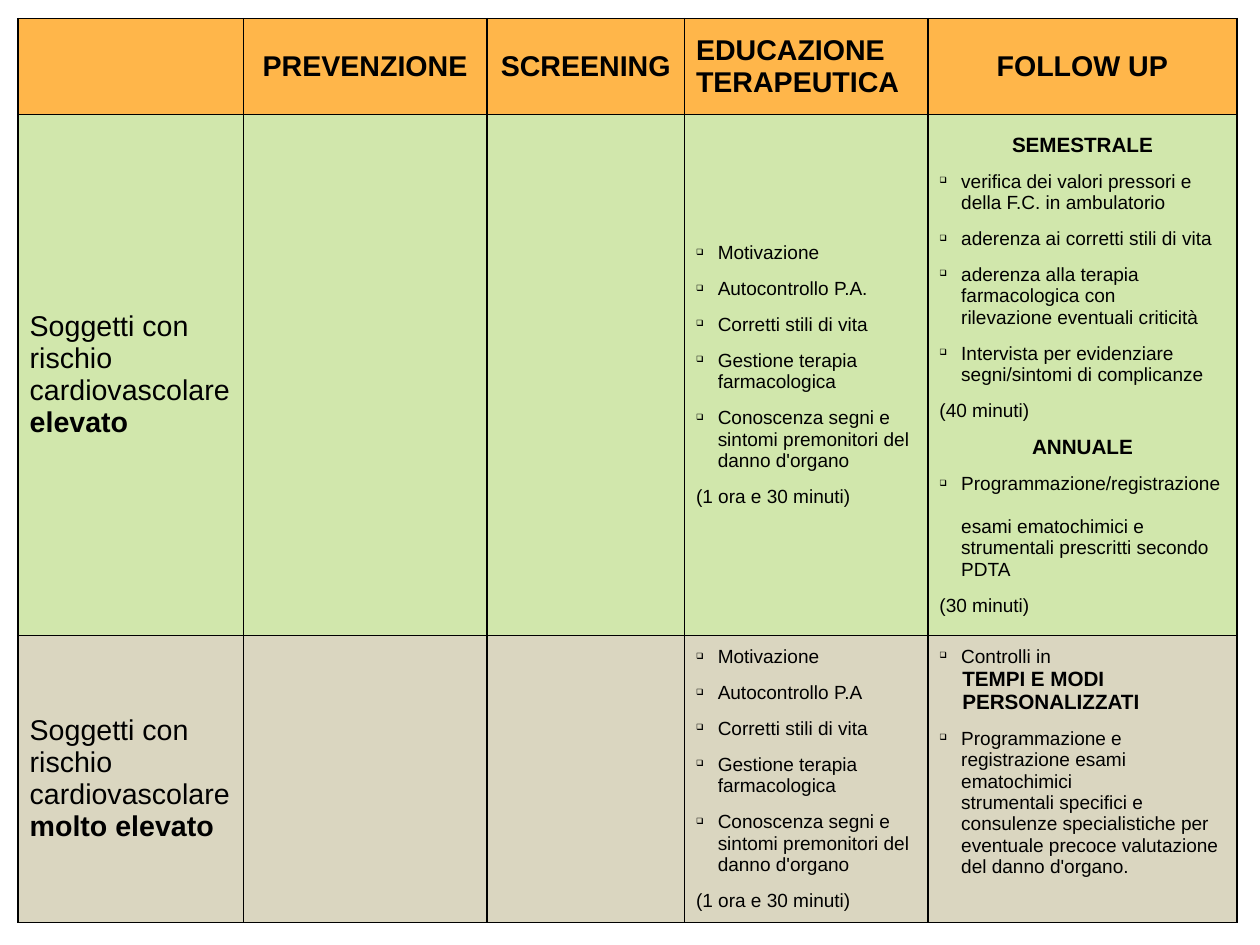
"""Build a one-slide table of care by cardiovascular risk level."""
from lxml import etree
from pptx import Presentation
from pptx import util as u
from pptx.dml.color import RGBColor
from pptx.enum import text
from pptx.oxml.ns import qn

COLORS = {"header": "FF9900", "high": "AAD367", "very high": "AFA575", "ink": "000000"}
OPACITY = {"header": 71, "high": 54, "very high": 45}
COLUMN_WIDTHS = [1.97, 2.13, 1.73, 2.13, 2.7]
ROW_HEIGHTS = [0.84, 4.56, 2.51]
BORDERS = {"lnL": 1.25, "lnR": 1.25, "lnT": 0.75, "lnB": 0.75}

# kind: size, bold, centred, left indent, space before
STYLES = {
    "heading": (18, True, True, 0, 0),
    "left heading": (18, True, False, 0, 0),
    "label": (18, False, False, 0, 0),
    "level": (18, True, False, 0, 0),
    "period": (13, True, True, 0, 9.2),
    "item": (12, False, False, 0.19, 9.2),
    "more": (12, False, False, 0.19, 0),
    "rest": (12, False, False, 0.19, 13.5),
    "strong": (13, True, False, 0.2, 0),
    "time": (12, False, False, 0, 9.2),
}


def education(self_check):
    return [
        ("item", "Motivazione"),
        ("item", self_check),
        ("item", "Corretti stili di vita"),
        ("item", "Gestione terapia"),
        ("more", "farmacologica"),
        ("item", "Conoscenza segni e"),
        ("more", "sintomi premonitori del"),
        ("more", "danno d'organo"),
        ("time", "(1 ora e 30 minuti)"),
    ]


def add_xml(parent, tag, **attributes):
    return etree.SubElement(parent, qn(tag), attributes)


ROWS = {
    "header": [
        [],
        [("heading", "PREVENZIONE")],
        [("heading", "SCREENING")],
        [("left heading", "EDUCAZIONE TERAPEUTICA")],
        [("heading", "FOLLOW UP")],
    ],
    "high": [
        [("label", "Soggetti con rischio"), ("label", "cardiovascolare"), ("level", "elevato")],
        [],
        [],
        education("Autocontrollo P.A."),
        [
            ("period", "SEMESTRALE"),
            ("item", "verifica dei valori pressori e"),
            ("more", "della F.C. in ambulatorio"),
            ("item", "aderenza ai corretti stili di vita"),
            ("item", "aderenza alla terapia"),
            ("more", "farmacologica con"),
            ("more", "rilevazione eventuali criticità"),
            ("item", "Intervista per evidenziare segni/sintomi di complicanze"),
            ("time", "(40 minuti)"),
            ("period", "ANNUALE"),
            ("item", "Programmazione/registrazione"),
            ("rest", "esami ematochimici e"),
            ("more", "strumentali prescritti secondo"),
            ("more", "PDTA"),
            ("time", "(30 minuti)"),
        ],
    ],
    "very high": [
        [("label", "Soggetti con rischio"), ("label", "cardiovascolare"), ("level", "molto elevato")],
        [],
        [],
        education("Autocontrollo P.A"),
        [
            ("item", "Controlli in"),
            ("strong", "TEMPI E MODI"),
            ("strong", "PERSONALIZZATI"),
            ("item", "Programmazione e"),
            ("more", "registrazione esami"),
            ("more", "ematochimici"),
            ("more", "strumentali specifici e"),
            ("more", "consulenze specialistiche per"),
            ("more", "eventuale precoce valutazione"),
            ("more", "del danno d'organo."),
        ],
    ],
}

deck = Presentation()
deck.slide_width, deck.slide_height = u.Inches(28 / 2.54), u.Inches(21 / 2.54)
page = deck.slides.add_slide(deck.slide_layouts[6])
table = page.shapes.add_table(
    len(ROW_HEIGHTS), len(COLUMN_WIDTHS), u.Inches(0.16), u.Inches(0.16),
    u.Inches(sum(COLUMN_WIDTHS)), u.Inches(sum(ROW_HEIGHTS))).table
table.first_row = table.horz_banding = False
for column, width in zip(table.columns, COLUMN_WIDTHS):
    column.width = u.Inches(width)
for row, height in zip(table.rows, ROW_HEIGHTS):
    row.height = u.Inches(height)

for row, (level, contents) in zip(table.rows, ROWS.items()):
    for cell, entries in zip(row.cells, contents):
        cell.vertical_anchor = text.MSO_ANCHOR.MIDDLE
        properties = cell._tc.get_or_add_tcPr()
        for side, points in BORDERS.items():
            line = add_xml(properties, f"a:{side}", w=str(u.Pt(points)))
            add_xml(add_xml(line, "a:solidFill"), "a:srgbClr", val=COLORS["ink"])
        cell.fill.solid()
        cell.fill.fore_color.rgb = RGBColor.from_string(COLORS[level])
        fill_color = properties.find(qn("a:solidFill")).find(qn("a:srgbClr"))
        add_xml(fill_color, "a:alpha", val=str(OPACITY[level] * 1000))

        for number, (kind, words) in enumerate(entries):
            size, bold, centred, indent, gap = STYLES[kind]
            para = cell.text_frame.add_paragraph() if number else cell.text_frame.paragraphs[0]
            para.text = words
            para.alignment = text.PP_ALIGN.CENTER if centred else text.PP_ALIGN.LEFT
            para.space_before = u.Pt(gap if number else 0)
            layout = para._p.get_or_add_pPr()
            layout.set("marL", str(u.Inches(indent)))
            layout.set("indent", str(u.Inches(-indent if kind == "item" else 0)))
            if kind == "item":
                add_xml(layout, "a:buSzPct", val="45000")
                add_xml(layout, "a:buChar", char="❑")
            para.font.name = "Arial"
            para.font.size = u.Pt(size)
            para.font.bold = bold
            para.font.color.rgb = RGBColor.from_string(COLORS["ink"])

table.cell(2, 4).margin_bottom = u.Inches(0.35)

deck.save("out.pptx")
